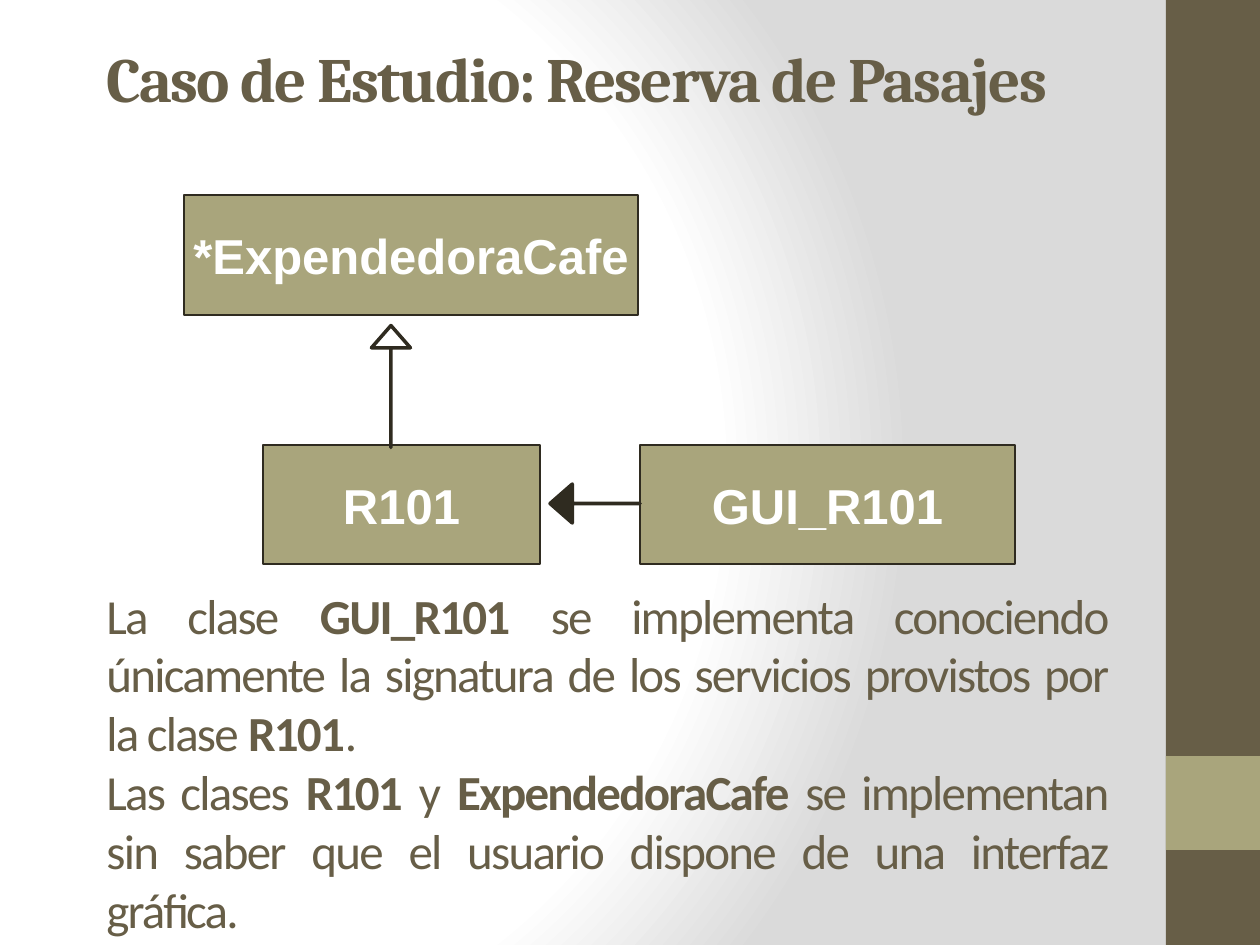
from lxml import etree
from pptx import Presentation
from pptx import util as u
from pptx.dml.color import RGBColor
from pptx.enum import shapes, text
from pptx.oxml.ns import qn

THEME = {
    "dark": "675E47", "olive": "A9A57C", "ink": "2F2B20", "white": "FFFFFF",
    "head": 36, "body": 28,
    "stops": [(0, "FFFFFF"), (75, "FFFFFF"), (100, "DADADA")],
    "focus": {"l": 20, "t": 50, "r": 100, "b": 50},
}
SIZE = (1260, 945)

# Content: frames are left, top, width, height in px
BARS = [("dark", (1166, 0, 94, 945)), ("olive", (1166, 756, 94, 94))]
TITLE = [[("Caso de Estudio: Reserva de Pasajes", True)]]
NOTES = [
    [("La clase ", False), ("GUI_R101 ", True),
     ("se implementa conociendo únicamente la signatura de los servicios "
      "provistos por la clase ", False), ("R101", True), (".", False)],
    [("Las clases ", False), ("R101", True), (" y ", False),
     ("ExpendedoraCafe", True),
     (" se implementan sin saber que el usuario dispone de una interfaz "
      "gráfica.", False)],
]
CLASSES = [
    ("*ExpendedoraCafe", (184, 195, 454, 120)),
    ("GUI_R101", (640, 445, 375, 119)),
    ("R101", (263, 445, 277, 119)),
]
ARROWS = [  # frame before turning, rotation, fill
    ((550, 484, 90, 39), 180, "ink"),
    ((330, 367, 122, 39), 270, None),
]


def px(n):
    return round(n * 914400 / 126)


def rgb(name):
    return RGBColor.from_string(THEME[name])


def put(obj, **vals):
    for key, val in vals.items():
        setattr(obj, key, val)


def block(kind, frame, fill, line=None, width=0.75):
    shp = slide.shapes.add_shape(kind, *map(px, frame))
    shp.shadow.inherit = False
    if fill:
        shp.fill.solid()
        shp.fill.fore_color.rgb = rgb(fill)
    else:
        shp.fill.background()
    if line:
        shp.line.color.rgb = rgb(line)
        shp.line.width = u.Pt(width)
    else:
        shp.line.fill.background()
    return shp


def write(shp, paras, font, size, color, align, wrap=True, gap=0):
    frame = shp.text_frame
    put(frame, word_wrap=wrap, vertical_anchor=text.MSO_ANCHOR.MIDDLE)
    for i, runs in enumerate(paras):
        para = frame.add_paragraph() if i else frame.paragraphs[0]
        para.alignment = align
        for words, bold in runs:
            run = para.add_run()
            run.text = words
            put(run.font, name=font, size=u.Pt(size), bold=bold)
            run.font.color.rgb = rgb(color)
            if gap:
                run.font._element.set("spc", str(gap))


def label(frame, *args):
    write(slide.shapes.add_textbox(*map(px, frame)), *args, gap=-100)


def shade():
    """Radial background gradient."""
    fill = slide.background.fill
    fill.gradient()
    grad = slide.background._cSld.find(".//" + qn("a:gradFill"))
    for kid in list(grad):
        grad.remove(kid)
    stops = etree.SubElement(grad, qn("a:gsLst"))
    for pos, color in THEME["stops"]:
        stop = etree.SubElement(stops, qn("a:gs"), pos=str(pos * 1000))
        etree.SubElement(stop, qn("a:srgbClr"), val=color)
    ring = etree.SubElement(grad, qn("a:path"))
    ring.set("path", "circle")
    etree.SubElement(ring, qn("a:fillToRect"),
                     {k: str(v * 1000) for k, v in THEME["focus"].items()})


deck = Presentation()
put(deck, slide_width=px(SIZE[0]), slide_height=px(SIZE[1]))
slide = deck.slides.add_slide(deck.slide_layouts[6])
RECT = shapes.MSO_SHAPE.RECTANGLE
ALIGN = text.PP_ALIGN

# Background and side bar
shade()
for fill, frame in BARS:
    block(RECT, frame, fill)

# Title
label((94, 0, 1071, 155), TITLE, "Cambria", THEME["head"], "dark", ALIGN.LEFT)

# Class diagram
for name, frame in CLASSES:
    box = block(RECT, frame, "olive", "ink")
    write(box, [[(name, True)]], "Arial", THEME["body"], "white",
          ALIGN.CENTER, wrap=False)
for frame, turn, fill in ARROWS:
    arrow = block(shapes.MSO_SHAPE.RIGHT_ARROW, frame, fill, "ink", 2)
    arrow.rotation = turn
    arrow.adjustments[0] = 0
    arrow.adjustments[1] = 0.57

# Explanation
label((94, 684, 1026, 155), NOTES, "Calibri", THEME["body"], "dark",
      ALIGN.JUSTIFY)

deck.save("out.pptx")
